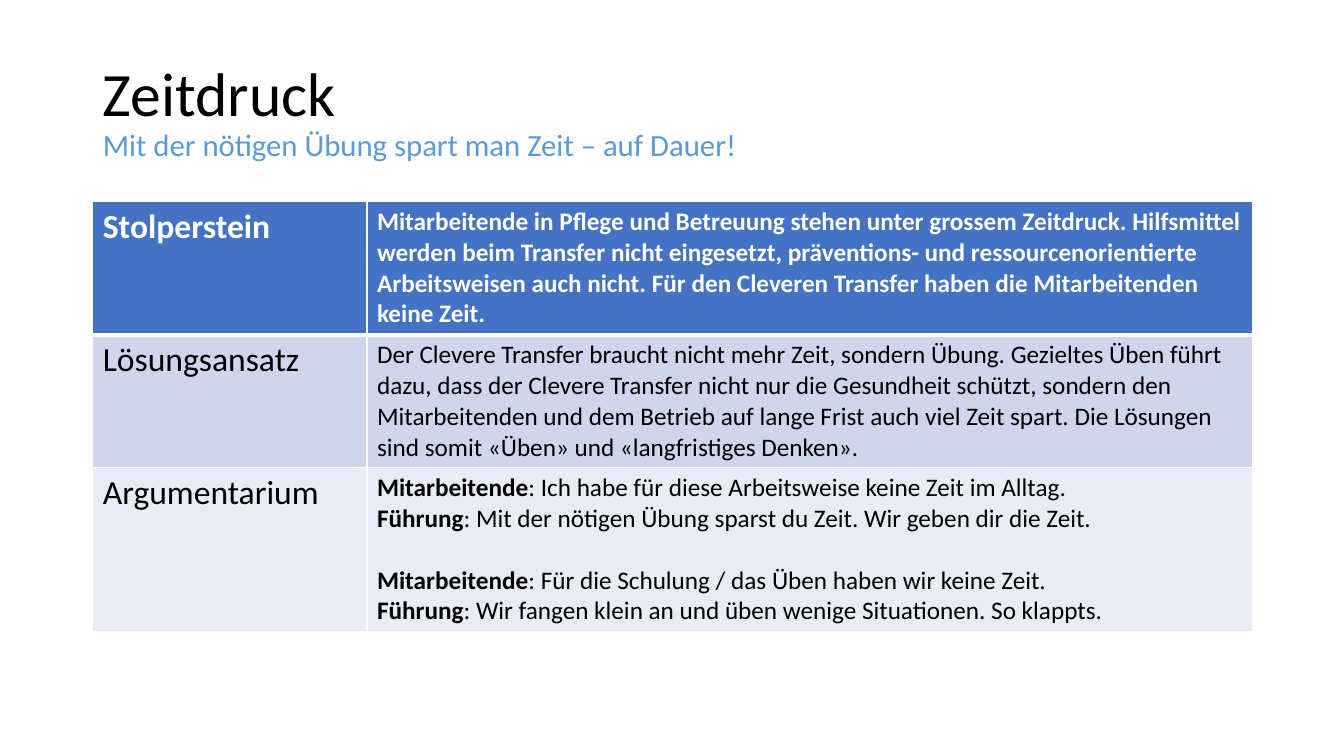
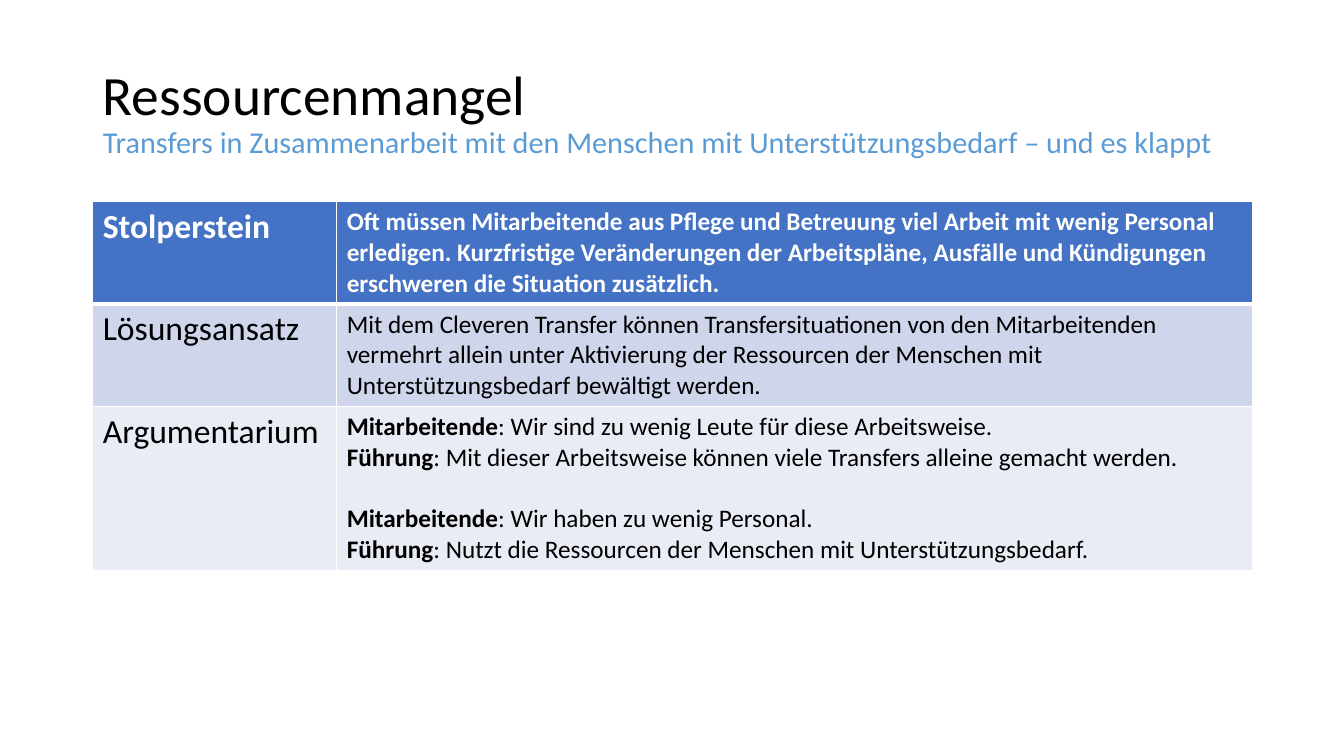
from lxml.etree import SubElement
from pptx import Presentation
from pptx.dml.color import RGBColor as RGB
from pptx.enum.text import MSO_ANCHOR as Anchor, MSO_AUTO_SIZE as Auto, PP_ALIGN as Align
from pptx.oxml.ns import qn
from pptx.util import Inches, Pt

FONT = "Calibri"
INK = {
    "text": "000000", "white": "FFFFFF", "sub": "5B9BD5",
    "head": "4472C4", "dark": "CFD5EA", "light": "E9EBF5",
}
WIDE, HIGH = 13.33, 7.5
LEFT, SPAN, TOP = 0.92, 11.5, 2
LINE, PAD = 0.305, 0.1
LABELS = ["Stolperstein", "Lösungsansatz", "Argumentarium"]
FILLS = ["head", "dark", "light"]
WHO = ["Mitarbeitende", "Führung"]

SLIDES = [
    {
        "title": "Zeitdruck",
        "sub": "Mit der nötigen Übung spart man Zeit – auf Dauer!",
        "sizes": (44, 22),
        "first": 2.72,
        "lines": (4, 4, 5),
        "block": "Mitarbeitende in Pflege und Betreuung stehen unter grossem Zeitdruck. "
                 "Hilfsmittel werden beim Transfer nicht eingesetzt, präventions- und "
                 "ressourcenorientierte Arbeitsweisen auch nicht. Für den Cleveren Transfer "
                 "haben die Mitarbeitenden keine Zeit.",
        "way": "Der Clevere Transfer braucht nicht mehr Zeit, sondern Übung. Gezieltes Üben "
               "führt dazu, dass der Clevere Transfer nicht nur die Gesundheit schützt, "
               "sondern den Mitarbeitenden und dem Betrieb auf lange Frist auch viel Zeit "
               "spart. Die Lösungen sind somit «Üben» und «langfristiges Denken».",
        "talk": [
            "Ich habe für diese Arbeitsweise keine Zeit im Alltag.",
            "Mit der nötigen Übung sparst du Zeit. Wir geben dir die Zeit.",
            "Für die Schulung / das Üben haben wir keine Zeit.",
            "Wir fangen klein an und üben wenige Situationen. So klappts.",
        ],
    },
    {
        "title": "Ressourcenmangel",
        "sub": "Transfers in Zusammenarbeit mit den Menschen mit Unterstützungsbedarf "
               "– und es klappt",
        "sizes": (39.6, 21.6),
        "first": 2.42,
        "lines": (3, 3, 5),
        "block": "Oft müssen Mitarbeitende aus Pflege und Betreuung viel Arbeit mit wenig "
                 "Personal erledigen. Kurzfristige Veränderungen der Arbeitspläne, Ausfälle "
                 "und Kündigungen erschweren die Situation zusätzlich.",
        "way": "Mit dem Cleveren Transfer können Transfersituationen von den Mitarbeitenden "
               "vermehrt allein unter Aktivierung der Ressourcen der Menschen mit "
               "Unterstützungsbedarf bewältigt werden.",
        "talk": [
            "Wir sind zu wenig Leute für diese Arbeitsweise.",
            "Mit dieser Arbeitsweise können viele Transfers alleine gemacht werden.",
            "Wir haben zu wenig Personal.",
            "Nutzt die Ressourcen der Menschen mit Unterstützungsbedarf.",
        ],
    },
]


def write(para, text, size=18, color="text", bold=False):
    run = para.add_run()
    run.text = text
    font = run.font
    font.name, font.size, font.bold = FONT, Pt(size), bold
    font.color.rgb = RGB.from_string(INK[color])


def place(shape, left, top, width, height):
    shape.left, shape.top = Inches(left), Inches(top)
    shape.width, shape.height = Inches(width), Inches(height)


def paint(cell, row):
    props = cell._tc.get_or_add_tcPr()
    wide = {"T": 3 if row == 1 else 1, "B": 3 if row == 0 else 1}
    for side in "LRTB":
        edge = SubElement(props, qn(f"a:ln{side}"), w=str(Pt(wide.get(side, 1))))
        SubElement(SubElement(edge, qn("a:solidFill")), qn("a:srgbClr"), val=INK["white"])
    cell.fill.solid()
    cell.fill.fore_color.rgb = RGB.from_string(INK[FILLS[row]])


def add_title(slide, data):
    frame = slide.shapes.title.text_frame
    frame.auto_size = Auto.NONE
    para = frame.paragraphs[0]
    para.alignment, para.line_spacing = Align.LEFT, 0.9
    big, small = data["sizes"]
    write(para, data["title"], size=big)
    para.add_line_break()
    write(para, data["sub"], size=small, color="sub")


def add_talk(frame, talk):
    for i, text in enumerate(talk):
        para = frame.add_paragraph() if i else frame.paragraphs[0]
        if i == 2:
            para.space_before = Pt(22)
        write(para, WHO[i % 2], bold=True)
        write(para, f": {text}")


def add_grid(slide, data):
    highs = [PAD + LINE * n for n in data["lines"]]
    box = (LEFT, TOP, SPAN, sum(highs))
    grid = slide.shapes.add_table(len(LABELS), 2, *map(Inches, box)).table
    for col, width in zip(grid.columns, (data["first"], SPAN - data["first"])):
        col.width = Inches(width)
    for row, (label, high) in enumerate(zip(LABELS, highs)):
        grid.rows[row].height = Inches(high)
        name, body = grid.cell(row, 0), grid.cell(row, 1)
        paint(name, row)
        paint(body, row)
        style = {"color": "text" if row else "white", "bold": row == 0}
        write(name.text_frame.paragraphs[0], label, size=24, **style)
        if row < 2:
            text = data[("block", "way")[row]]
            write(body.text_frame.paragraphs[0], text, **style)
        else:
            add_talk(body.text_frame, data["talk"])


def main():
    deck = Presentation()
    deck.slide_width, deck.slide_height = Inches(WIDE), Inches(HIGH)
    layout = deck.slide_layouts[5]
    title = layout.placeholders[0]
    place(title, LEFT, 0.4, SPAN, 1.45)
    title.text_frame.vertical_anchor = Anchor.MIDDLE
    for data in SLIDES:
        slide = deck.slides.add_slide(layout)
        add_title(slide, data)
        add_grid(slide, data)
    deck.save("out.pptx")


if __name__ == "__main__":
    main()
